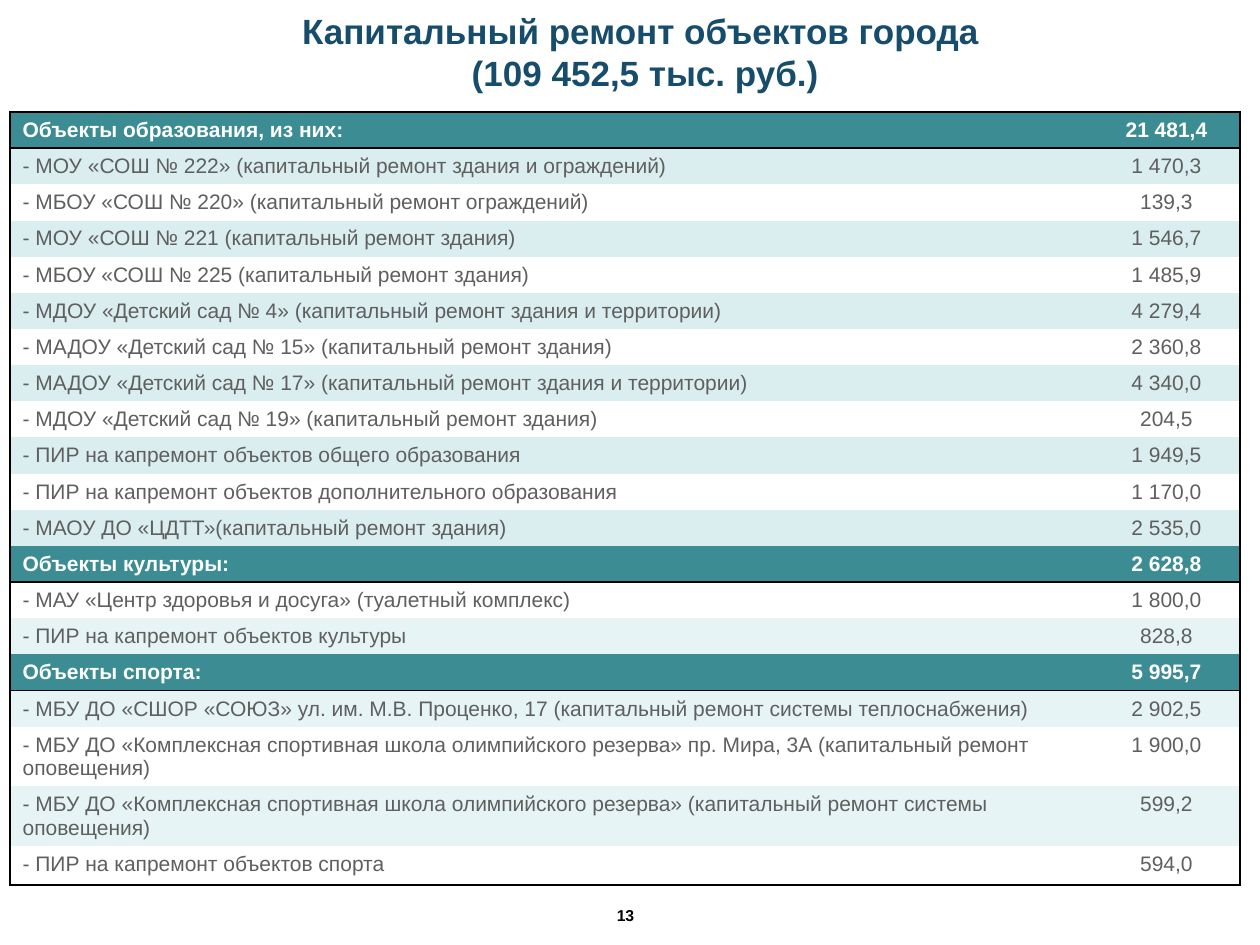
from lxml.etree import SubElement
from pptx import Presentation
from pptx.dml.color import RGBColor
from pptx.enum.text import MSO_ANCHOR, MSO_AUTO_SIZE, PP_ALIGN
from pptx.oxml import parse_xml
from pptx.oxml.ns import nsdecls, qn
from pptx.util import Emu, Pt

TEAL, WHITE, GREY, BLACK = "3C8C93", "FFFFFF", "5F5F5F", "000000"
MINT, PALE = "DAEDEF", "E6F4F5"

GROUPS = [
    ("Объекты образования, из них:", "21 481,4", (MINT, WHITE), [
        ("- МОУ «СОШ № 222» (капитальный ремонт здания и ограждений)", "1 470,3"),
        ("- МБОУ «СОШ № 220» (капитальный ремонт ограждений)", "139,3"),
        ("- МОУ «СОШ № 221 (капитальный ремонт здания)", "1 546,7"),
        ("- МБОУ «СОШ № 225 (капитальный ремонт здания)", "1 485,9"),
        ("- МДОУ «Детский сад № 4» (капитальный ремонт здания и территории)", "4 279,4"),
        ("- МАДОУ «Детский сад № 15» (капитальный ремонт здания)", "2 360,8"),
        ("- МАДОУ «Детский сад № 17» (капитальный ремонт здания и территории)", "4 340,0"),
        ("- МДОУ «Детский сад № 19» (капитальный ремонт здания)", "204,5"),
        ("- ПИР на капремонт объектов общего образования", "1 949,5"),
        ("- ПИР на капремонт объектов дополнительного образования", "1 170,0"),
        ("- МАОУ ДО «ЦДТТ»(капитальный ремонт здания)", "2 535,0"),
    ]),
    ("Объекты культуры:", "2 628,8", (WHITE, PALE), [
        ("- МАУ «Центр здоровья и досуга» (туалетный комплекс)", "1 800,0"),
        ("- ПИР на капремонт объектов культуры", "828,8"),
    ]),
    ("Объекты спорта:", "5 995,7", (PALE, WHITE), [
        ("- МБУ ДО «СШОР «СОЮЗ» ул. им. М.В. Проценко, 17 "
         "(капитальный ремонт системы теплоснабжения)", "2 902,5"),
        ("- МБУ ДО «Комплексная спортивная школа олимпийского резерва» "
         "пр. Мира, 3А (капитальный ремонт оповещения)", "1 900,0"),
        ("- МБУ ДО «Комплексная спортивная школа олимпийского резерва» "
         "(капитальный ремонт системы оповещения)", "599,2"),
        ("- ПИР на капремонт объектов спорта", "594,0"),
    ]),
]


def px(n):
    """Turn pixels into EMU."""
    return Emu(round(n * 914400 / 126))


def tint(code):
    """Turn a hex string into a colour."""
    return RGBColor.from_string(code)


class Deck:
    """Hold the style and the current slide."""

    def __init__(self, face):
        """Open a deck with one title-only slide."""
        self.face = face
        self.show = Presentation()
        self.show.slide_width, self.show.slide_height = px(1260), px(945)
        self.slide = self.show.slides.add_slide(self.show.slide_layouts[5])

    def style(self, frame, text, size, color, bold, align=PP_ALIGN.CENTER):
        """Put one styled paragraph into a text frame."""
        frame.text = text
        para = frame.paragraphs[0]
        para.alignment = align
        font = para.font
        font.name, font.size, font.bold = self.face, Pt(size), bold
        font.color.rgb = tint(color)

    def title(self, text, x, y, w, h):
        """Place and fill the title."""
        box = self.slide.shapes.title
        box.left, box.top, box.width, box.height = map(px, (x, y, w, h))
        frame = box.text_frame
        frame.auto_size = MSO_AUTO_SIZE.NONE
        frame.vertical_anchor = MSO_ANCHOR.MIDDLE
        self.style(frame, text, 20, "164C6C", True)

    def label(self, text, x, y, w, h):
        """Add a small bold text box."""
        frame = self.slide.shapes.add_textbox(*map(px, (x, y, w, h))).text_frame
        frame.word_wrap = True
        frame.vertical_anchor = MSO_ANCHOR.MIDDLE
        self.style(frame, text, 9, BLACK, True)

    def edge(self, cell, drawn):
        """Draw the named cell borders and hide the others."""
        props = cell._tc.get_or_add_tcPr()
        for spot, side in enumerate("LRTB"):
            line = parse_xml(f'<a:ln{side} {nsdecls("a")} w="12700"/>')
            if side in drawn:
                fill = SubElement(line, qn("a:solidFill"))
                SubElement(fill, qn("a:srgbClr"), val=BLACK)
            else:
                SubElement(line, qn("a:noFill"))
            props.insert(spot, line)

    def table(self, groups, x, y, cols, high, last):
        """Add the table of groups, each under a dark heading row."""
        rows = []
        for name, total, bands, items in groups:
            rows.append((name, total, TEAL))
            rows += [(*item, bands[i % 2]) for i, item in enumerate(items)]
        end = len(rows) - 1
        grid = self.slide.shapes.add_table(
            len(rows), len(cols), px(x), px(y), px(sum(cols)), px(high * end + last)).table
        for col, wide in zip(grid.columns, cols):
            col.width = px(wide)
        for r, (name, value, fill) in enumerate(rows):
            grid.rows[r].height = px(last if r == end else high)
            head = fill == TEAL
            top = "T" if r == 0 or rows[r - 1][2] == TEAL else ""
            base = "B" if head or r == end else ""
            for c, (text, side, align) in enumerate(
                    [(name, "L", PP_ALIGN.LEFT), (value, "R", PP_ALIGN.CENTER)]):
                cell = grid.cell(r, c)
                cell.fill.solid()
                cell.fill.fore_color.rgb = tint(fill)
                self.style(cell.text_frame, text, 12, WHITE if head else GREY, head, align)
                self.edge(cell, side + top + base)


def main():
    """Build and save the slide."""
    deck = Deck("Arial")
    deck.title("Капитальный ремонт объектов города\v (109 452,5 тыс. руб.)", 21, 16, 1239, 70)
    deck.table(GROUPS, 10, 112, (1083, 147), 36, 39)
    deck.label("13", 591, 900, 69, 31)
    deck.show.save("out.pptx")


if __name__ == "__main__":
    main()
